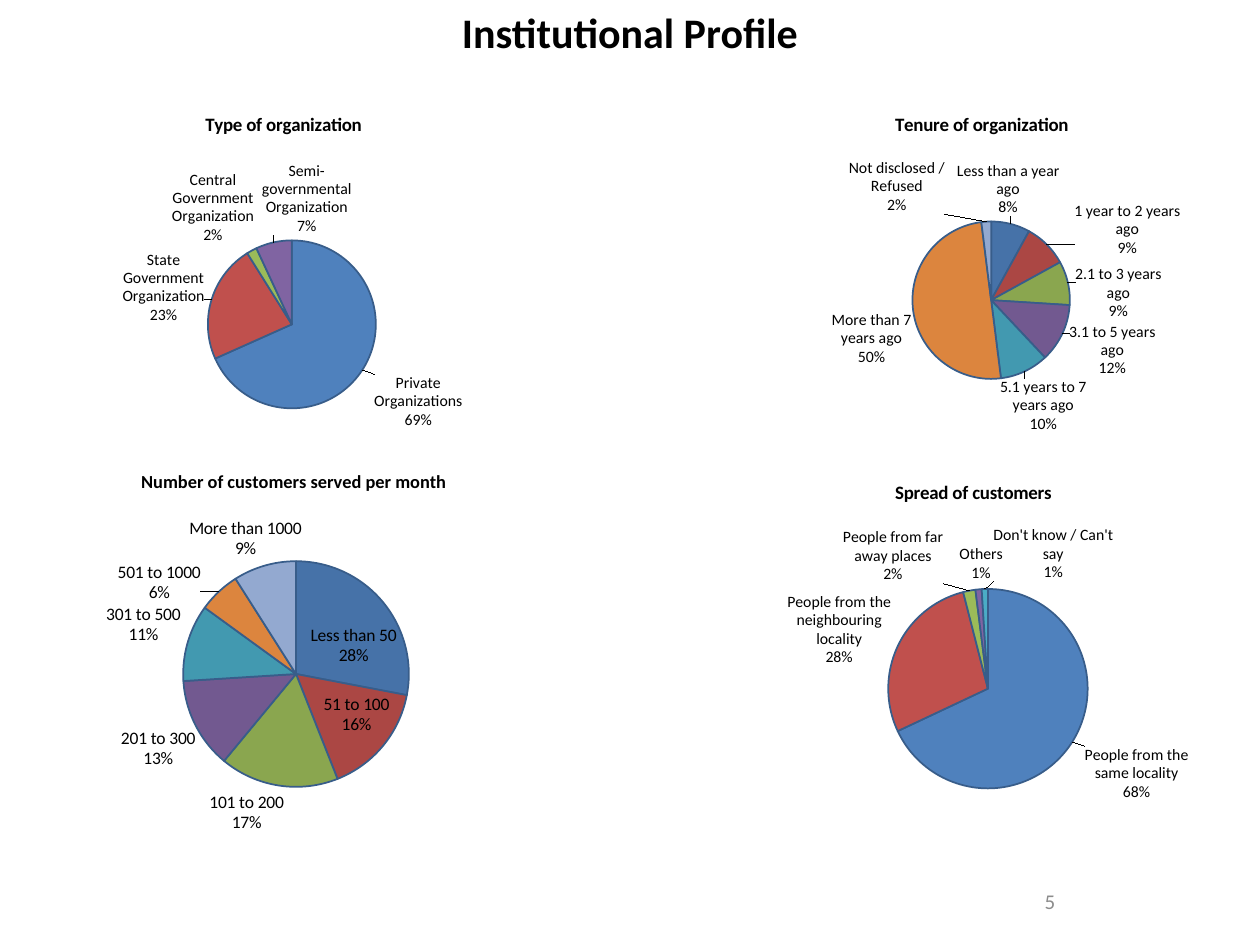
from pptx import Presentation
from pptx.chart.data import CategoryChartData
from pptx.dml.color import RGBColor
from pptx.enum.chart import XL_CHART_TYPE, XL_LABEL_POSITION
from pptx.enum.text import MSO_ANCHOR, MSO_AUTO_SIZE, PP_ALIGN
from pptx.oxml import parse_xml
from pptx.oxml.ns import nsdecls, qn
from pptx.util import Inches, Pt

COLS, ROWS = 120, 90
WIDE, HIGH = Inches(10), Inches(7.5)
HEX = {"ink": "000000", "gray": "8C8C8C", "edge": "385D8A"}
FEW = ["4F81BD", "C0504D", "9BBB59", "8064A2", "4BACC6"]
MANY = ["4672A8", "AB4744", "8AA64F", "725990", "4299B0", "DC853E", "93A9D0"]
NEAR = (0.01, 0)

PIES = [
    dict(name="Type of organization", box=(0, 9, 54, 36), disc=(27.8, 30.9, 16), size=9, head=10.8, parts=[
        ("Private Organizations", 69, NEAR),
        ("State Government Organization", 23, (0, 0.07)),
        ("Central Government Organization", 2, NEAR),
        ("Semi-governmental Organization", 7, (0.14, 0))]),
    dict(name="Tenure of organization", box=(67, 9, 53, 34), disc=(94.4, 28.6, 15), size=9, head=10.8, parts=[
        ("Less than a year ago", 8, (-0.1, 0)),
        ("1 year to 2 years ago", 9, (0.04, 0.05)),
        ("2.1 to 3 years ago", 9, (0, 0.11)),
        ("3.1 to 5 years ago", 12, (0, -0.04)),
        ("5.1 years to 7 years ago", 10, (-0.05, 0)),
        ("More than 7 years ago", 50, NEAR),
        ("Not disclosed / Refused", 2, (-0.16, 0))]),
    dict(name="Spread of customers", box=(63, 44, 59.4, 37), disc=(94.1, 65.6, 19), size=9, head=10.8, parts=[
        ("People from the same locality", 68, NEAR),
        ("People from the neighbouring locality", 28, (0, 0.06)),
        ("People from far away places", 2, (-0.04, 0)),
        ("Others", 1, (0.04, 0)),
        ("Don't know / Can't say", 1, (0.11, 0))]),
    dict(name="Number of customers served per month", box=(-3, 43, 62, 38), disc=(28.2, 64.2, 21.5),
         size=10, head=10.5, parts=[
        ("Less than 50", 28, (-0.12, 0.17)),
        ("51 to 100", 16, (-0.1, -0.14)),
        ("101 to 200", 17, NEAR),
        ("201 to 300", 13, NEAR),
        ("301 to 500", 11, (0, 0.01)),
        ("501 to 1000", 6, (-0.02, 0.04)),
        ("More than 1000", 9, (0.06, 0))]),
]


def place(col, row, cols, rows):
    """Turn grid cells into slide lengths."""
    return (round(WIDE * col / COLS), round(HIGH * row / ROWS),
            round(WIDE * cols / COLS), round(HIGH * rows / ROWS))


def style(font, size, color, bold=False):
    """Format a font."""
    for key, val in dict(name="Calibri", size=Pt(size), bold=bold).items():
        setattr(font, key, val)
    font.color.rgb = RGBColor.from_string(HEX[color])


def write(shape, box, text, size, color, bold=False):
    """Move a shape and fill it with one centred line."""
    for key, val in zip(("left", "top", "width", "height"), place(*box)):
        setattr(shape, key, val)
    frame = shape.text_frame
    frame.text = text
    for key, val in dict(word_wrap=True, vertical_anchor=MSO_ANCHOR.MIDDLE).items():
        setattr(frame, key, val)
    line = frame.paragraphs[0]
    line.alignment = PP_ALIGN.CENTER
    style(line.runs[0].font, size, color, bold)
    return frame


def frame_disc(chart, box, disc):
    """Fix the pie's place inside its chart."""
    left, top, cols, rows = box
    mid, row, size = disc
    spots = dict(x=(mid - size / 2 - left) / cols, y=(row - size / 2 - top) / rows,
                 w=size / cols, h=size / rows)
    vals = "".join(f'<c:{key} val="{val:.4f}"/>' for key, val in spots.items())
    area = chart._chartSpace.chart.plotArea
    for old in area.findall(qn("c:layout")):
        area.remove(old)
    area.insert(0, parse_xml(
        f'<c:layout {nsdecls("c")}><c:manualLayout><c:layoutTarget val="inner"/>'
        f'<c:xMode val="edge"/><c:yMode val="edge"/>{vals}</c:manualLayout></c:layout>'))


def label(series, shifts, whole):
    """Label each slice with its name and share, shifted from its rim."""
    labels = series.data_labels
    look = dict(show_value=not whole, show_percentage=whole, show_category_name=True,
                number_format="0%" if whole else '0"%"', number_format_is_linked=False,
                position=XL_LABEL_POSITION.OUTSIDE_END)
    for key, val in look.items():
        setattr(labels, key, val)
    node = labels._element
    split = parse_xml(f'<c:separator {nsdecls("c")}>\n</c:separator>')
    node.find(qn("c:showPercent")).addnext(split)
    bubble = node.find(qn("c:showBubbleSize"))
    if bubble is not None:
        bubble.addnext(split)
    form = "0%" if whole else "0&quot;%&quot;"
    for spot, (x, y) in enumerate(shifts):
        node.insert(spot, parse_xml(
            f'<c:dLbl {nsdecls("c")}><c:idx val="{spot}"/><c:layout><c:manualLayout>'
            f'<c:x val="{x}"/><c:y val="{y}"/></c:manualLayout></c:layout>'
            f'<c:numFmt formatCode="{form}" sourceLinked="0"/>'
            f'<c:dLblPos val="outEnd"/><c:showLegendKey val="0"/><c:showVal val="{int(not whole)}"/>'
            f'<c:showCatName val="1"/><c:showSerName val="0"/><c:showPercent val="{int(whole)}"/>'
            '<c:showBubbleSize val="0"/><c:separator>\n</c:separator></c:dLbl>'))


def add_pie(slide, name, box, disc, size, head, parts):
    """Add a titled pie chart with labelled slices."""
    cats, vals, shifts = zip(*parts)
    data = CategoryChartData()
    data.categories = cats
    data.add_series("Series 1", vals)
    chart = slide.shapes.add_chart(XL_CHART_TYPE.PIE, *place(*box), data).chart
    style(chart.font, size, "ink")
    chart.has_legend = False
    chart.has_title = True
    title = chart.chart_title
    title.include_in_layout = False
    title.text_frame.text = name
    style(title.text_frame.paragraphs[0].runs[0].font, head, "ink", True)
    plot = chart.plots[0]
    plot.vary_by_categories = True
    series = plot.series[0]
    for spot, color in zip(range(len(cats)), FEW if len(cats) <= len(FEW) else MANY):
        form = series.points[spot].format
        form.fill.solid()
        form.fill.fore_color.rgb = RGBColor.from_string(color)
        form.line.color.rgb = RGBColor.from_string(HEX["edge"])
        form.line.width = Pt(1)
    label(series, shifts, sum(vals) == 100)
    frame_disc(chart, box, disc)


def main():
    """Build the slide."""
    deck = Presentation()
    deck.slide_width, deck.slide_height = WIDE, HIGH
    slide = deck.slides.add_slide(deck.slide_layouts[5])
    frame = write(slide.shapes.title, (0, 0, COLS, 6), "Institutional Profile", 24, "ink", True)
    frame.auto_size = MSO_AUTO_SIZE.SHAPE_TO_FIT_TEXT
    for pie in PIES:
        add_pie(slide, **pie)
    spot = (86, 83.4, 28, 4.8)
    write(slide.shapes.add_textbox(*place(*spot)), spot, "5", 12, "gray")
    deck.save("out.pptx")


if __name__ == "__main__":
    main()
